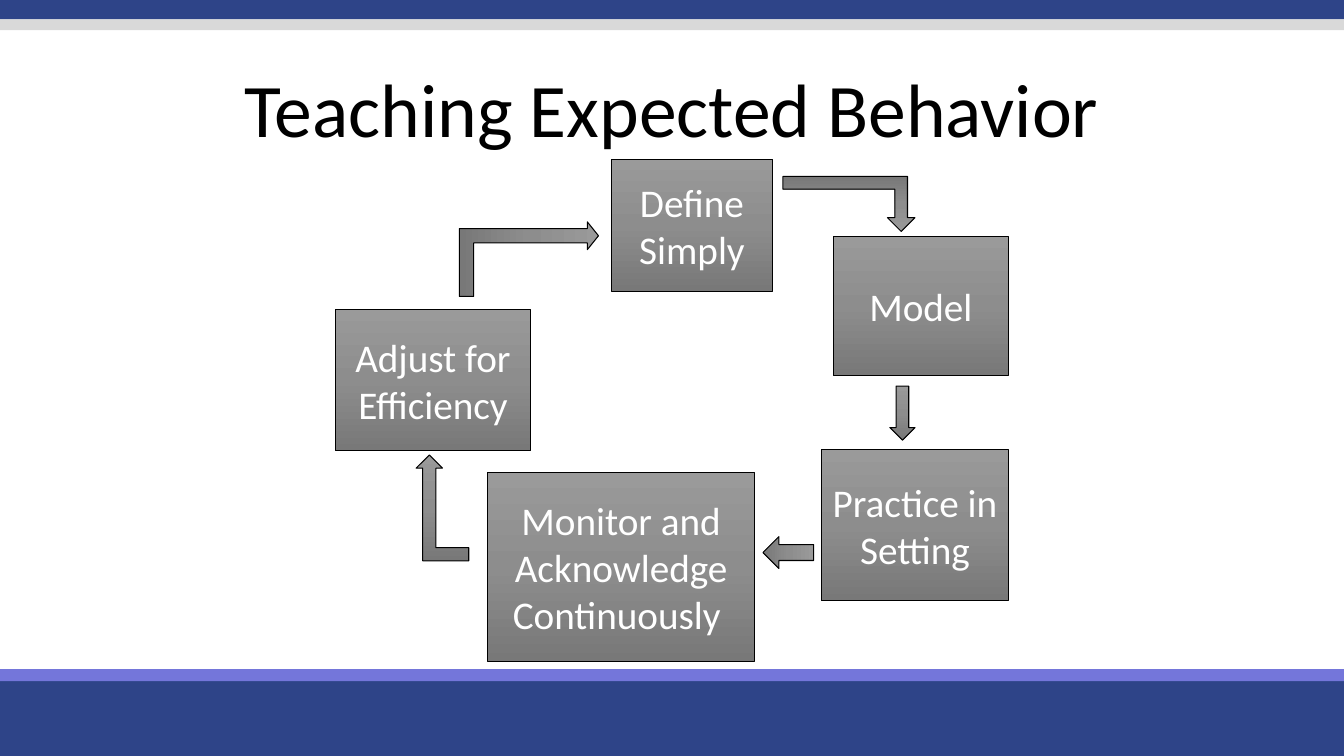
"""Build the slide showing the cycle for teaching expected behavior."""
from copy import deepcopy
from dataclasses import dataclass

from pptx import Presentation
from pptx import util as u
from pptx.dml.color import RGBColor
from pptx.enum import shapes, text
from pptx.oxml.ns import qn


@dataclass(frozen=True)
class Theme:
    font: str = "Calibri"
    title_size: float = 54
    step_size: float = 28
    outline_width: float = 0.75
    navy: str = "2E4488"
    violet: str = "7476DA"
    silver: str = "D9D9D9"
    black: str = "000000"
    white: str = "FFFFFF"
    gradient: tuple[tuple[float, str], ...] = ((0, "9A9A9A"), (0.5, "8D8D8D"), (1, "787878"))


@dataclass(frozen=True)
class Box:
    left: float
    top: float
    width: float
    height: float

    def lengths(self) -> tuple[u.Length, ...]:
        return tuple(u.Pt(v) for v in (self.left, self.top, self.width, self.height))


@dataclass(frozen=True)
class Band:
    top: float
    height: float
    color: str


@dataclass(frozen=True)
class Step:
    label: str
    box: Box


@dataclass(frozen=True)
class Arrow:
    preset: shapes.MSO_SHAPE
    box: Box
    adjustments: tuple[float, ...]
    rotation: float = 0
    mirrored: bool = False


THEME = Theme()
SLIDE_WIDTH, SLIDE_HEIGHT = 960, 540
BENT, DOWN = shapes.MSO_SHAPE.BENT_UP_ARROW, shapes.MSO_SHAPE.DOWN_ARROW

BANDS = (
    Band(482.4, 57.6, THEME.navy),
    Band(478, 8.6, THEME.violet),
    Band(0, 13.9, THEME.navy),
    Band(13.9, 7.7, THEME.silver),
)
STEPS = (
    Step("Define Simply", Box(436.5, 113.8, 115.5, 94.4)),
    Step("Model", Box(595.3, 169, 125, 99.4)),
    Step("Practice in Setting", Box(586.8, 321, 133.5, 108.2)),
    Step("Monitor and Acknowledge Continuously ", Box(348.3, 337.5, 190.8, 135)),
    Step("Adjust for Efficiency", Box(239.5, 221, 139.5, 101)),
)
ARROWS = (
    Arrow(BENT, Box(559.2, 126, 94.3, 39.3), (0.231, 0.25, 0.25), 180, True),
    Arrow(DOWN, Box(635.6, 275.8, 18, 38.6), (0.5, 0.5)),
    Arrow(DOWN, Box(551.7, 376.6, 22.8, 36.2), (0.5, 0.5), 90),
    Arrow(BENT, Box(297.3, 325, 37.6, 75.6), (0.25, 0.25, 0.25), 0, True),
    Arrow(BENT, Box(351.2, 135.4, 53.2, 99.4), (0.193, 0.186, 0.15), 90, True),
)


def style_font(paragraph, size: float, color: str) -> None:
    paragraph.alignment = text.PP_ALIGN.CENTER
    paragraph.font.name = THEME.font
    paragraph.font.size = u.Pt(size)
    paragraph.font.color.rgb = RGBColor.from_string(color)


def add_band(slide, band: Band) -> None:
    box = Box(0, band.top, SLIDE_WIDTH, band.height)
    stripe = slide.shapes.add_shape(shapes.MSO_SHAPE.RECTANGLE, *box.lengths())
    stripe.shadow.inherit = False
    stripe.fill.solid()
    stripe.fill.fore_color.rgb = RGBColor.from_string(band.color)
    stripe.line.fill.background()


def add_shaded(slide, preset: shapes.MSO_SHAPE, box: Box):
    shaded = slide.shapes.add_shape(preset, *box.lengths())
    shaded.shadow.inherit = False
    shaded.line.color.rgb = RGBColor.from_string(THEME.black)
    shaded.line.width = u.Pt(THEME.outline_width)
    shaded.fill.gradient()
    shaded.fill.gradient_angle = 270
    stop_list = shaded._element.spPr.find(".//" + qn("a:gsLst"))
    stop_list.append(deepcopy(stop_list[-1]))
    for stop, (position, color) in zip(shaded.fill.gradient_stops, THEME.gradient):
        stop.position = position
        stop.color.rgb = RGBColor.from_string(color)
    return shaded


def add_step(slide, step: Step) -> None:
    frame = add_shaded(slide, shapes.MSO_SHAPE.RECTANGLE, step.box).text_frame
    frame.word_wrap = True
    frame.vertical_anchor = text.MSO_ANCHOR.MIDDLE
    frame.text = step.label
    style_font(frame.paragraphs[0], THEME.step_size, THEME.white)


def add_arrow(slide, arrow: Arrow) -> None:
    shaded = add_shaded(slide, arrow.preset, arrow.box)
    for index, value in enumerate(arrow.adjustments):
        shaded.adjustments[index] = value
    shaded.rotation = arrow.rotation
    if arrow.mirrored:
        shaded._element.spPr.find(qn("a:xfrm")).set("flipH", "1")


def set_title(slide, wording: str) -> None:
    title = slide.shapes.title
    title.left, title.top, title.width, title.height = Box(0, 56.2, SLIDE_WIDTH, 57.6).lengths()
    frame = title.text_frame
    frame.text = wording
    frame.word_wrap = True
    frame.auto_size = text.MSO_AUTO_SIZE.NONE
    frame.vertical_anchor = text.MSO_ANCHOR.BOTTOM
    frame.paragraphs[0].line_spacing = 0.9
    style_font(frame.paragraphs[0], THEME.title_size, THEME.black)


def main() -> None:
    deck = Presentation()
    deck.slide_width, deck.slide_height = u.Pt(SLIDE_WIDTH), u.Pt(SLIDE_HEIGHT)
    slide = deck.slides.add_slide(deck.slide_layouts.get_by_name("Title Only"))
    set_title(slide, "Teaching Expected Behavior")
    for band in BANDS:
        add_band(slide, band)
    for step in STEPS:
        add_step(slide, step)
    for arrow in ARROWS:
        add_arrow(slide, arrow)
    deck.save("out.pptx")


if __name__ == "__main__":
    main()
